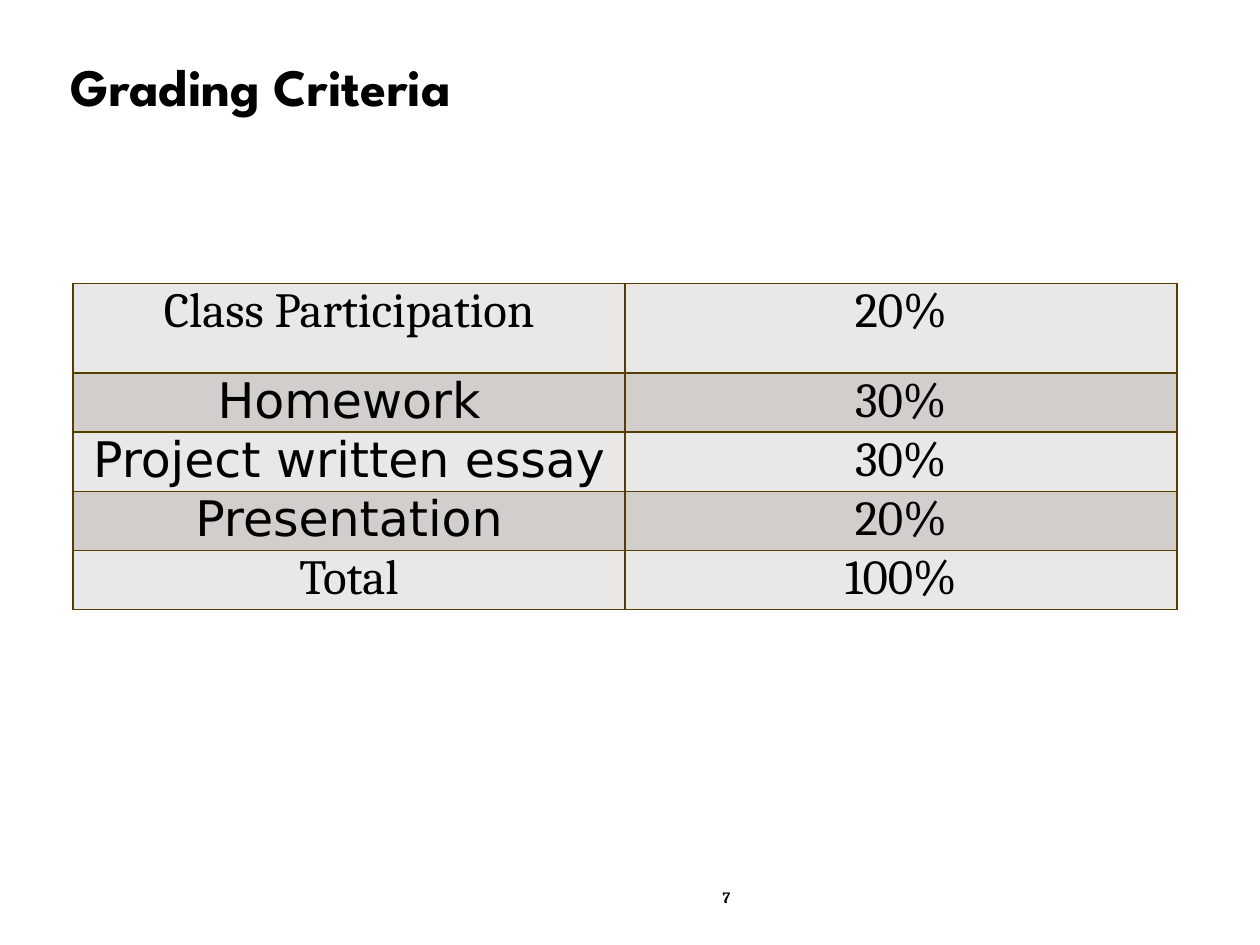
"""Build the grading criteria slide with its table of weights."""
import pptx
import pptx.dml.color
import pptx.enum.text
import pptx.oxml
import pptx.util
from pptx.oxml.ns import nsdecls

TITLE = "Grading Criteria"
PAGE_NUMBER = "7"
SERIF, SANS, DISPLAY = "Cambria", "DejaVu Sans", "League Spartan"
CRITERIA = [
    ("Class Participation", SERIF, "20%"),
    ("Homework", SANS, "30%"),
    ("Project written essay", SANS, "30%"),
    ("Presentation", SANS, "20%"),
    ("Total", SERIF, "100%"),
]
BANDS = ["E9E8E7", "D1CECC"]
BORDER = "553E00"
BLACK = "000000"
TABLE_LEFT, TABLE_TOP, COLUMN_WIDTH = 0.58, 2.25, 4.38
FIRST_ROW, OTHER_ROW = 0.71, 0.47

Inches = pptx.util.Inches
ALIGN = pptx.enum.text.PP_ALIGN


def rgb(value):
    """Turn a hex string into a colour."""
    return pptx.dml.color.RGBColor.from_string(value)


def write(frame, text, font, size, align, bold=False):
    """Write one formatted paragraph into a text frame."""
    frame.text = text
    para = frame.paragraphs[0]
    para.alignment = align
    para.font.name = font
    para.font.size = pptx.util.Pt(size)
    para.font.bold = bold
    para.font.color.rgb = rgb(BLACK)
    return para


def add_borders(cell):
    """Outline a cell on all four sides."""
    properties = cell._tc.get_or_add_tcPr()
    for position, side in enumerate(("lnL", "lnR", "lnT", "lnB")):
        line = pptx.oxml.parse_xml(
            f'<a:{side} {nsdecls("a")} w="12700"><a:solidFill>'
            f'<a:srgbClr val="{BORDER}"/></a:solidFill></a:{side}>')
        properties.insert(position, line)


def add_title(page):
    """Fill and place the title placeholder."""
    title = page.shapes.title
    title.left, title.top, title.width, title.height = map(Inches, (0.46, 0.24, 8.92, 0.94))
    frame = title.text_frame
    frame.auto_size = pptx.enum.text.MSO_AUTO_SIZE.NONE
    frame.vertical_anchor = pptx.enum.text.MSO_ANCHOR.MIDDLE
    para = write(frame, TITLE, DISPLAY, 30, ALIGN.LEFT, bold=True)
    para.line_spacing = 0.9


def add_criteria(page):
    """Add the banded table of criteria and weights."""
    heights = [FIRST_ROW] + [OTHER_ROW] * (len(CRITERIA) - 1)
    table = page.shapes.add_table(
        len(CRITERIA), 2, Inches(TABLE_LEFT), Inches(TABLE_TOP),
        Inches(2 * COLUMN_WIDTH), Inches(sum(heights))).table
    for column in table.columns:
        column.width = Inches(COLUMN_WIDTH)
    for index, (label, font, weight) in enumerate(CRITERIA):
        table.rows[index].height = Inches(heights[index])
        for column, (text, face) in enumerate([(label, font), (weight, SERIF)]):
            cell = table.cell(index, column)
            cell.margin_left = cell.margin_right = Inches(0.07)
            cell.margin_top = cell.margin_bottom = 0
            cell.fill.solid()
            cell.fill.fore_color.rgb = rgb(BANDS[index % 2])
            write(cell.text_frame, text, face, 28, ALIGN.CENTER)
            add_borders(cell)


def add_page_number(page):
    """Add the page number, centred right of the slide's middle."""
    box = page.shapes.add_textbox(*map(Inches, (0.58, 7, 9.17, 0.25)))
    box.text_frame.word_wrap = True
    box.text_frame.margin_left = Inches(1.3)
    write(box.text_frame, PAGE_NUMBER, SERIF, 9, ALIGN.CENTER, bold=True)


def main():
    """Build and save the deck."""
    deck = pptx.Presentation()
    deck.slide_width, deck.slide_height = Inches(10), Inches(7.5)
    page = deck.slides.add_slide(deck.slide_layouts[5])
    add_page_number(page)
    add_title(page)
    add_criteria(page)
    deck.save("out.pptx")


if __name__ == "__main__":
    main()
